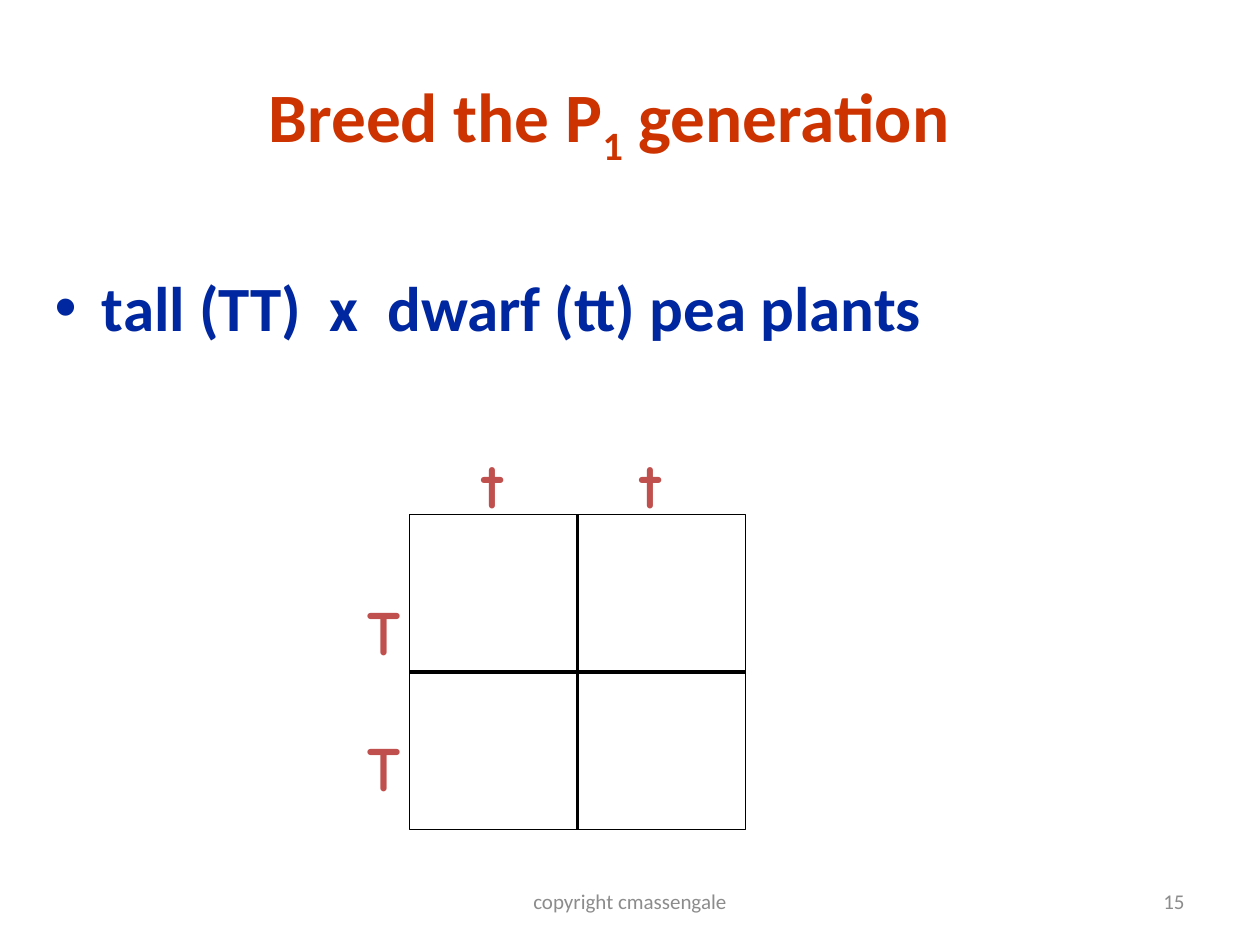
from dataclasses import dataclass

from lxml.etree import SubElement
from pptx import Presentation
from pptx.dml.color import RGBColor
from pptx.enum.shapes import MSO_CONNECTOR, MSO_SHAPE
from pptx.enum.text import MSO_ANCHOR, MSO_AUTO_SIZE, PP_ALIGN
from pptx.oxml.ns import qn
from pptx.util import Emu, Inches, Pt


@dataclass(frozen=True)
class TextStyle:
    font: str
    size: float
    color: str
    bold: bool = False


@dataclass(frozen=True)
class Theme:
    title: TextStyle = TextStyle("Calibri", 39.6, "CC3300", True)
    body: TextStyle = TextStyle("Calibri", 36, "00279F", True)
    allele: TextStyle = TextStyle("Comic Neue", 36, "C0504D", True)
    footer: TextStyle = TextStyle("Calibri", 12, "8C8C8C")
    line: str = "000000"


@dataclass(frozen=True)
class Box:
    """Place on a grid of 120 columns by 90 rows."""
    column: float
    row: float
    columns: float
    rows: float


@dataclass(frozen=True)
class Label:
    text: str
    box: Box
    style: TextStyle
    align: PP_ALIGN = PP_ALIGN.LEFT
    anchor: MSO_ANCHOR = MSO_ANCHOR.TOP
    wrap: bool = True


THEME = Theme()
CELL = Inches(10) / 120


def place(box: Box) -> tuple:
    return tuple(Emu(round(n * CELL))
                 for n in (box.column, box.row, box.columns, box.rows))


def style_paragraph(paragraph, style: TextStyle) -> None:
    font = paragraph.font
    font.name, font.size, font.bold = style.font, Pt(style.size), style.bold
    font.color.rgb = RGBColor.from_string(style.color)


def move_placeholder(placeholder, box: Box):
    (placeholder.left, placeholder.top,
     placeholder.width, placeholder.height) = place(box)
    placeholder.text_frame.auto_size = MSO_AUTO_SIZE.NONE
    return placeholder.text_frame.paragraphs[0]


def draw_label(slide, label: Label) -> None:
    frame = slide.shapes.add_textbox(*place(label.box)).text_frame
    frame.word_wrap = label.wrap
    frame.vertical_anchor = label.anchor
    paragraph = frame.paragraphs[0]
    paragraph.text, paragraph.alignment = label.text, label.align
    style_paragraph(paragraph, label.style)


def draw_divider(slide, square, start: int, end: int) -> None:
    divider = slide.shapes.add_connector(MSO_CONNECTOR.STRAIGHT, 0, 0, 0, 0)
    divider.begin_connect(square, start)
    divider.end_connect(square, end)
    divider.line.color.rgb = RGBColor.from_string(THEME.line)
    divider.line.width = Pt(2)
    SubElement(divider._element.spPr, qn("a:effectLst"))


def draw_punnett_square(slide, box: Box) -> None:
    square = slide.shapes.add_shape(MSO_SHAPE.RECTANGLE, *place(box))
    square.shadow.inherit = False
    square.fill.background()
    square.line.color.rgb = RGBColor.from_string(THEME.line)
    square.line.width = Pt(1)
    for start, end in ((2, 0), (3, 1)):
        draw_divider(slide, square, start, end)


def main() -> None:
    deck = Presentation()
    deck.slide_width, deck.slide_height = Inches(10), Inches(7.5)
    slide = deck.slides.add_slide(deck.slide_layouts[1])

    # Title with subscript generation number
    heading = move_placeholder(slide.shapes.title, Box(0, 8, 116, 7))
    heading.alignment = PP_ALIGN.CENTER
    style_paragraph(heading, THEME.title)
    for text, baseline in (("Breed the P", 0), ("1", -25000), (" generation", 0)):
        run = heading.add_run()
        run.text = text
        if baseline:
            run._r.get_or_add_rPr().set("baseline", str(baseline))

    # The cross
    cross = move_placeholder(slide.placeholders[1], Box(4, 25, 109, 44))
    cross.text = "tall (TT)  x  dwarf (tt) pea plants"
    style_paragraph(cross, THEME.body)

    # Punnett square with the parents' alleles
    draw_punnett_square(slide, Box(39, 49, 32, 30))
    for i in range(2):
        for text, box in (("T", Box(33.8, 55.8 + 13 * i, 6.6, 8.4)),
                          ("t", Box(44.8 + 15 * i, 41.8, 5.2, 8.4))):
            draw_label(slide, Label(text, box, THEME.allele, wrap=False))

    # Footer and slide number
    for text, column, columns, align in (
            ("copyright cmassengale", 41, 38, PP_ALIGN.CENTER),
            ("15", 86, 28, PP_ALIGN.RIGHT)):
        draw_label(slide, Label(text, Box(column, 83.4, columns, 4.8),
                                THEME.footer, align, MSO_ANCHOR.MIDDLE))

    deck.save("out.pptx")


if __name__ == "__main__":
    main()
